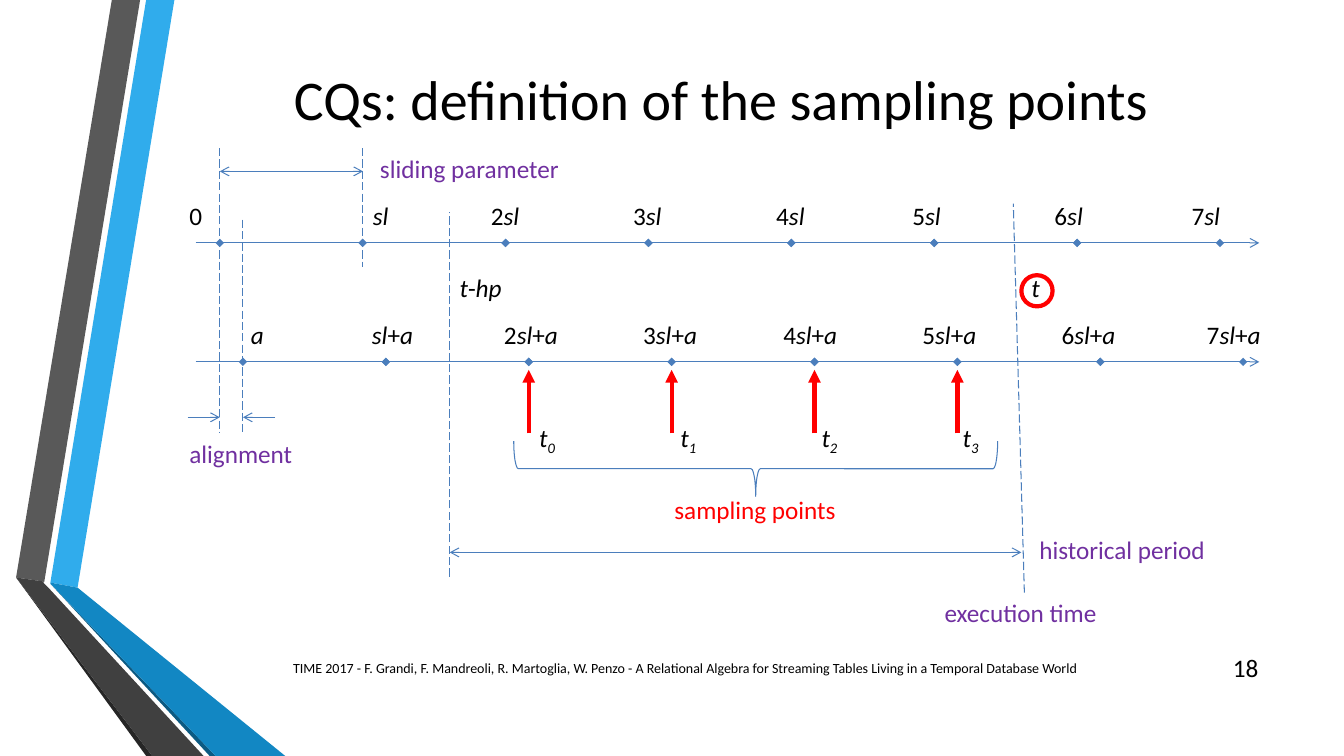
from itertools import groupby
from lxml.etree import SubElement
from pptx import Presentation
from pptx.dml.color import RGBColor
from pptx.enum.dml import MSO_LINE
from pptx.enum.shapes import MSO_CONNECTOR, MSO_SHAPE
from pptx.enum.text import MSO_ANCHOR, PP_ALIGN
from pptx.oxml.ns import qn
from pptx.util import Pt

PX = 9144  # 100 px to the inch
BLACK, BLUE, RED, PURPLE = "000000", "4B7EBC", "FF0000", "7030A0"
FONT = "Calibri"

RIBBONS = [
    ("30ACEC", [(50, 578), (77, 583), (173, 0), (145, 0)]),
    ("595959", [(139, 0), (111, 0), (16, 573), (44, 577)]),
    ("262626", [(16, 573), (145, 750), (151, 750)]),
    ("0C5A82", [(50, 579), (208, 750), (214, 750)]),
    ("1287C3", [(50, 579), (214, 750), (283, 750), (77, 583), (50, 578)]),
    ("404040", [(202, 750), (48, 583), (43, 578), (44, 577), (16, 573), (151, 750)]),
]

# text, box, size, colour, alignment
FRAME = [
    ("CQs: definition of the sampling points", (167, 43, 1096, 108), 40, PP_ALIGN.CENTER),
    ("TIME 2017 - F. Grandi, F. Mandreoli, R. Martoglia, W. Penzo - "
     "A Relational Algebra for Streaming Tables Living in a Temporal Database World",
     (281, 643, 867, 40), 10, PP_ALIGN.LEFT),
    ("18", (1198, 642, 60, 40), 18, PP_ALIGN.RIGHT),
]
NOTES = [
    ("sliding parameter", (367, 147, 200, 40), PURPLE),
    ("alignment", (178, 430, 123, 40), PURPLE),
    ("historical period", (1021, 525, 186, 40), PURPLE),
    ("execution time", (927, 588, 179, 40), PURPLE),
    ("sampling points", (659, 485, 182, 40), RED),
]

# text, box, tab stops on the slide, digits lowered
SYMBOLS = [
    ("0\tsl\t2sl\t3sl\t4sl\t5sl\t6sl\t7sl", (178, 194, 1075, 40),
     (370, 487, 628, 770, 905, 1046, 1182), False),
    ("\ta\tsl+a\t2sl+a\t3sl+a\t4sl+a\t5sl+a\t6sl+a\t7sl+a", (194, 312, 1085, 40),
     (249, 369, 500, 638, 777, 915, 1053, 1197), False),
    ("t0\tt1\tt2\tt3", (525, 414, 470, 40), (675, 815, 955), True),
    ("t-hp", (446, 265, 75, 40), (), False),
    ("t", (1013, 265, 39, 40), (), False),
]

AXIS = (194, 1249)
STEPS, SPAN = 7, 992
SCALES = [(218, 241), (241, 359)]  # first mark, height
SAMPLES = range(2, 6)
DASHES = [
    (218, 147, 218, 430), (241, 218, 241, 430), (360, 147, 360, 265),
    (446, 572, 446, 210), (1016, 588, 1005, 202),
]
SPANS = [(218, 170, 360, 170), (446, 548, 1013, 548)]
POINTERS = [(186, 414, 218, 414), (273, 414, 241, 414)]

deck = Presentation()
deck.slide_width, deck.slide_height = 1333 * PX, 750 * PX
slide = deck.slides.add_slide(deck.slide_layouts[6])
shapes = slide.shapes


def rgb(code):
    return RGBColor.from_string(code)


def scale(*sizes):
    return [round(size * PX) for size in sizes]


def mark(start, step):
    return start + SPAN * step / STEPS


def rule(ends, color=BLUE, width=0.75, head=None, tail=None, dash=False):
    line = shapes.add_connector(MSO_CONNECTOR.STRAIGHT, *scale(*ends))
    line.line.color.rgb = rgb(color)
    line.line.width = Pt(width)
    if dash:
        line.line.dash_style = MSO_LINE.LONG_DASH
    props = line.line._get_or_add_ln()
    for tag, kind in (("a:headEnd", head), ("a:tailEnd", tail)):
        if kind:
            SubElement(props, qn(tag), type=kind)
    SubElement(line._element.spPr, qn("a:effectLst"))


def outline(kind, box, color, width):
    shape = shapes.add_shape(kind, *scale(*box))
    shape.shadow.inherit = False
    shape.fill.background()
    shape.line.color.rgb = rgb(color)
    shape.line.width = Pt(width)
    return shape


def write(box, color=BLACK, size=18, align=PP_ALIGN.LEFT, tabs=()):
    """Add an empty text box and return its styled first paragraph."""
    frame = shapes.add_textbox(*scale(*box)).text_frame
    frame.word_wrap = True
    para = frame.paragraphs[0]
    para.alignment = align
    if tabs:
        stops = SubElement(para._p.get_or_add_pPr(), qn("a:tabLst"))
        inset = box[0] + 10
        for tab in tabs:
            SubElement(stops, qn("a:tab"), pos=str((tab - inset) * PX), algn="l")
    font = para.font
    font.name, font.size = FONT, Pt(size)
    font.color.rgb = rgb(color)
    return para, frame


def symbols(text, box, tabs, lower):
    """Set letters in italics, and lower the digits if asked."""
    para, _ = write(box, tabs=tabs)
    for alpha, chars in groupby(text, str.isalpha):
        run = para.add_run()
        run.text = "".join(chars)
        run.font.italic = alpha or lower
        if lower and not alpha:
            digit, *gap = run.text
            run.text = digit
            run._r.get_or_add_rPr().set("baseline", "-25000")
            if gap:
                para.add_run().text = "\t"


for color, points in RIBBONS:
    pen = shapes.build_freeform(*points[0], scale=PX)
    pen.add_line_segments(points[1:], close=True)
    ribbon = pen.convert_to_shape()
    ribbon.shadow.inherit = False
    ribbon.fill.solid()
    ribbon.fill.fore_color.rgb = rgb(color)
    ribbon.line.fill.background()

for text, box, size, align in FRAME:
    para, frame = write(box, size=size, align=align)
    frame.vertical_anchor = MSO_ANCHOR.MIDDLE
    para.add_run().text = text

for start, y in SCALES:
    rule((AXIS[0], y, AXIS[1], y), tail="arrow")
    for step in range(STEPS):
        ends = (mark(start, step), y, mark(start, step + 1), y)
        rule(ends, head="diamond", tail="diamond")

for ends in DASHES:
    rule(ends, dash=True)
for ends in SPANS:
    rule(ends, head="arrow", tail="arrow")
for ends in POINTERS:
    rule(ends, tail="arrow")
for step in SAMPLES:
    x = mark(SCALES[1][0], step)
    rule((x, 430, x, 367), RED, 3, tail="triangle")

brace = outline(MSO_SHAPE.RIGHT_BRACE, (722, 225, 55, 480), BLUE, 0.75)
brace.rotation = 90
outline(MSO_SHAPE.OVAL, (1013, 273, 31, 31), RED, 3)

for text, box, color in NOTES:
    write(box, color)[0].add_run().text = text
for label in SYMBOLS:
    symbols(*label)

deck.save("out.pptx")
